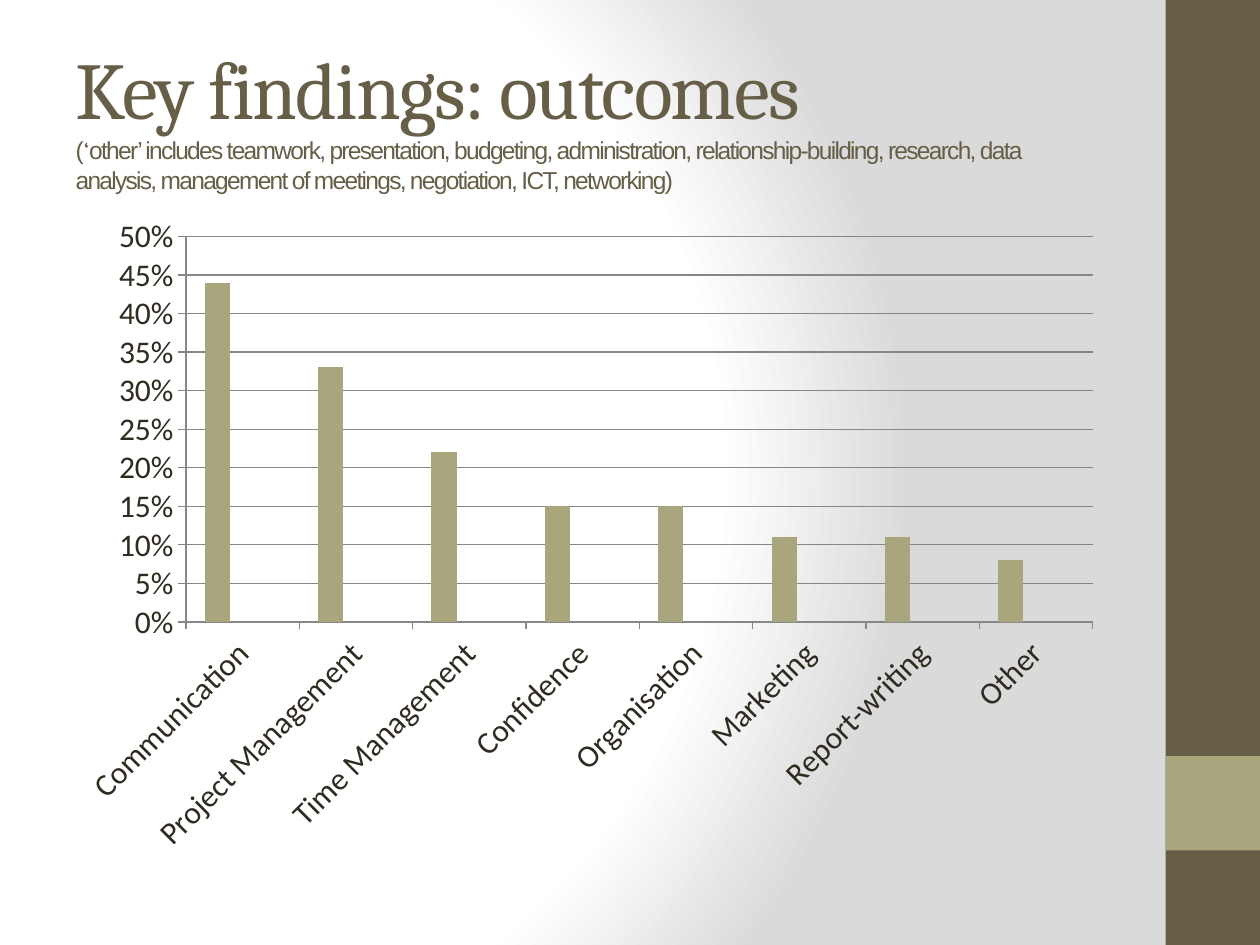
from lxml import etree
from pptx import Presentation
from pptx.chart.data import CategoryChartData
from pptx.dml.color import RGBColor
from pptx.enum import chart as charts, shapes, text
from pptx.oxml import parse_xml
from pptx.oxml.ns import nsdecls, qn
from pptx.util import Inches, Pt

# Content
HEADING = "Key findings: outcomes"
SUBTITLE = [
    ("(", "Arial"),
    ("‘", "Cambria"),
    ("other’ includes teamwork, presentation, budgeting, administration, "
     "relationship-building, research, data analysis, management of meetings, "
     "negotiation, ICT, networking)", "Arial"),
]
OUTCOMES = {
    "Communication": 0.44, "Project Management": 0.33, "Time Management": 0.22,
    "Confidence": 0.15, "Organisation": 0.15, "Marketing": 0.11,
    "Report-writing": 0.11, "Other": 0.08,
}
EMPTY = [None] * len(OUTCOMES)
SERIES = [
    ("Series 1", list(OUTCOMES.values()), "A9A57C"),
    ("Series 2", EMPTY, "9CBEBD"),
    ("Series 3", EMPTY, "D2CB6C"),
]
BROWN, OLIVE, INK, GREY = "675E47", "A9A57C", "2F2B20", "878787"
SIDE_BLOCKS = [((9.25, 0, 0.75, 7.5), BROWN), ((9.25, 6, 0.75, 0.75), OLIVE)]
BACKGROUND_STOPS = [(0, "FFFFFF"), (75, "FFFFFF"), (100, "DADADA")]


def set_color(color_format, value):
    color_format.rgb = RGBColor.from_string(value)


def fill_solid(fill, value):
    fill.solid()
    set_color(fill.fore_color, value)


def box(*lengths):
    return [Inches(length) for length in lengths]


def set_font(font, name, size, color):
    for attribute, value in {"name": name, "size": Pt(size), "bold": False}.items():
        setattr(font, attribute, value)
    set_color(font.color, color)


def paint_background(slide):
    slide.background.fill.solid()
    properties = slide.element.find(".//" + qn("p:bgPr"))
    stops = "".join(
        f'<a:gs pos="{position * 1000}"><a:srgbClr val="{color}"/></a:gs>'
        for position, color in BACKGROUND_STOPS)
    properties.replace(properties[0], parse_xml(
        f'<a:gradFill {nsdecls("a")} rotWithShape="1"><a:gsLst>{stops}</a:gsLst>'
        '<a:path path="circle"><a:fillToRect l="20000" t="50000" r="100000" b="50000"/>'
        '</a:path></a:gradFill>'))


def add_side_blocks(slide):
    for place, color in SIDE_BLOCKS:
        block = slide.shapes.add_shape(shapes.MSO_SHAPE.RECTANGLE, *box(*place))
        block.shadow.inherit = False
        fill_solid(block.fill, color)
        block.line.fill.background()


def write_title(title):
    title.left, title.top, title.width, title.height = box(0.5, 0.3, 8.33, 1.25)
    frame = title.text_frame
    formats = {"word_wrap": True, "auto_size": text.MSO_AUTO_SIZE.NONE,
               "vertical_anchor": text.MSO_ANCHOR.MIDDLE}
    for attribute, value in formats.items():
        setattr(frame, attribute, value)
    paragraph = frame.paragraphs[0]
    paragraph.alignment = text.PP_ALIGN.LEFT

    def add_run(words, font_name, size):
        run = paragraph.add_run()
        run.text = words
        set_font(run.font, font_name, size, BROWN)
        run.font._element.set("spc", "-100")  # letter spacing of -1 pt

    add_run(HEADING, "Cambria", 46)
    paragraph.add_line_break()
    for words, font_name in SUBTITLE:
        add_run(words, font_name, 14)


def add_outcome_chart(slide):
    data = CategoryChartData(number_format="0%")
    data.categories = list(OUTCOMES)
    for name, values, _ in SERIES:
        data.add_series(name, values)
    chart = slide.shapes.add_chart(
        charts.XL_CHART_TYPE.COLUMN_CLUSTERED, *box(0.51, 1.62, 8.33, 5.25), data).chart
    chart.has_legend = chart.has_title = False
    set_font(chart.font, "Calibri", 18, INK)

    # Columns
    plot = chart.plots[0]
    plot.gap_width, plot.overlap, plot.vary_by_categories = 150, 0, False
    for series, (_, _, color) in zip(plot.series, SERIES):
        fill_solid(series.format.fill, color)

    # Axes
    category_axis, value_axis = chart.category_axis, chart.value_axis
    scale = {"minimum_scale": 0, "maximum_scale": 0.5, "major_unit": 0.05,
             "has_major_gridlines": True}
    for attribute, value in scale.items():
        setattr(value_axis, attribute, value)
    value_axis.tick_labels.number_format = "0%"
    value_axis.tick_labels.number_format_is_linked = False
    for axis in (category_axis, value_axis):
        axis.major_tick_mark = charts.XL_TICK_MARK.OUTSIDE
        set_font(axis.tick_labels.font, "Calibri", 18, INK)
    for part in (category_axis, value_axis, value_axis.major_gridlines):
        part.format.line.width = Pt(0.75)
        set_color(part.format.line.color, GREY)
    label_body = category_axis._element.find(".//" + qn("a:bodyPr"))
    label_body.set("rot", str(-45 * 60000))


presentation = Presentation()
presentation.slide_width, presentation.slide_height = box(10, 7.5)
slide = presentation.slides.add_slide(presentation.slide_layouts[5])
paint_background(slide)
add_side_blocks(slide)
write_title(slide.shapes.title)
add_outcome_chart(slide)
presentation.save("out.pptx")
